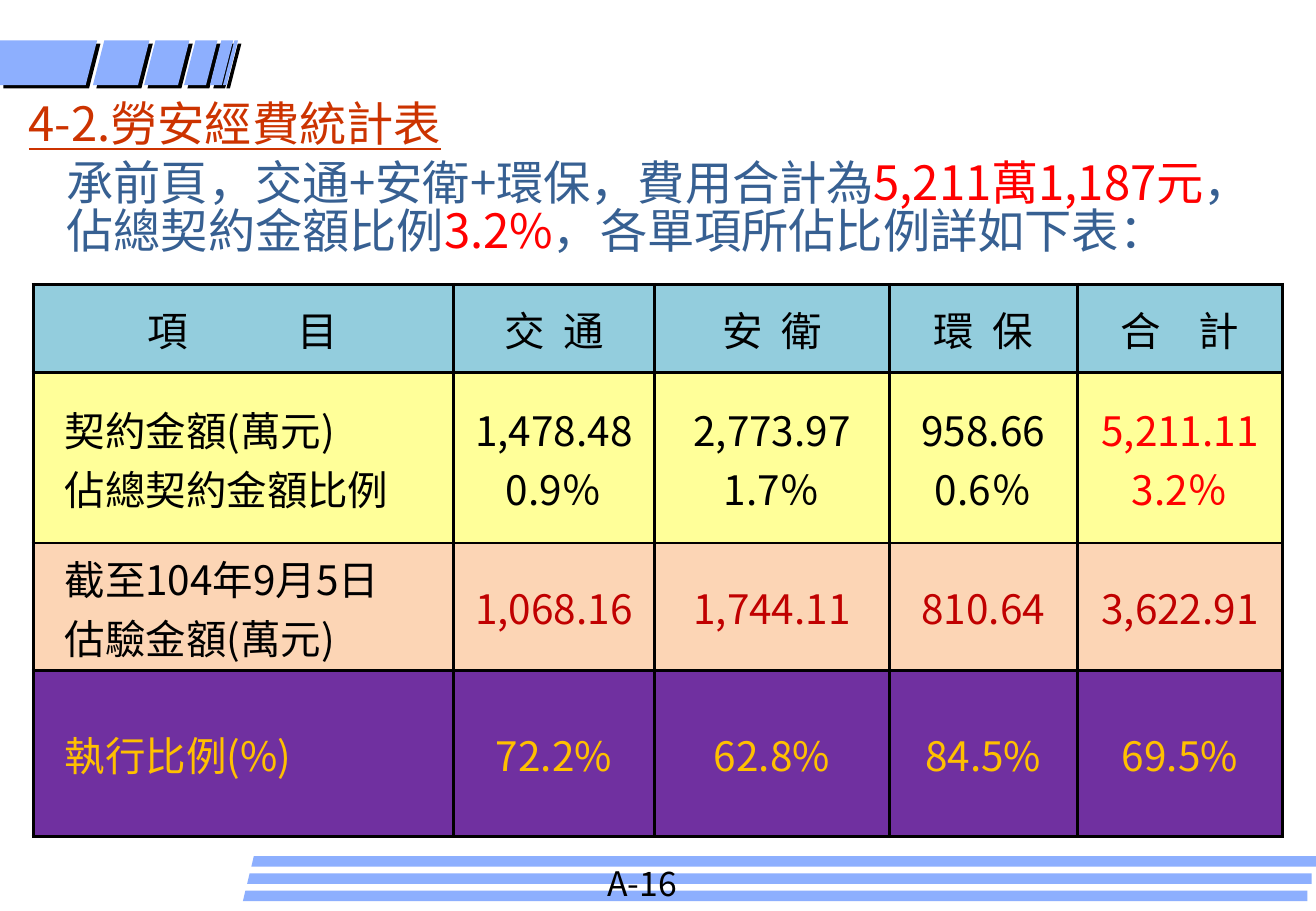
from lxml.etree import SubElement
from pptx import Presentation
from pptx.dml.color import RGBColor
from pptx.enum.text import MSO_ANCHOR, PP_ALIGN
from pptx.oxml.ns import qn
from pptx.util import Pt

FONT = "Noto Sans CJK SC"
BLACK = RGBColor(0x00, 0x00, 0x00)
RED = RGBColor(0xFF, 0x00, 0x00)
DARK_RED = RGBColor(0xC0, 0x00, 0x00)
TITLE_ORANGE = RGBColor(0xCC, 0x33, 0x00)
TEXT_BLUE = RGBColor(0x37, 0x60, 0x92)
BAND_BLUE = RGBColor(0x8D, 0xAF, 0xFE)
HEADER_TEAL = RGBColor(0x93, 0xCD, 0xDD)
YELLOW = RGBColor(0xFF, 0xFF, 0x99)
PEACH = RGBColor(0xFC, 0xD5, 0xB5)
PURPLE = RGBColor(0x70, 0x30, 0xA0)
GOLD = RGBColor(0xFF, 0xC0, 0x00)

# Top left and top right of each slanted block
BLOCKS = [(0, 57.6), (61.9, 88.6), (92.2, 112.3),
          (115.9, 128.9), (131.2, 138.2), (139, 141.1)]
BLOCK_TOP, BLOCK_BOTTOM, BLOCK_SLANT = 23.9, 50.5, 6.8

COLUMN_WIDTHS = [249, 119.5, 139, 111.5, 121.7]
ROW_HEIGHTS = [52.6, 100.8, 75.6, 98.6]
# Header characters with the gap between them
HEADERS = [("項", "目", 65), ("交", "通", 11), ("安", "衛", 11),
           ("環", "保", 11), ("合", "計", 22)]
# Row fill, label colour, value colour, total colour, cell lines
BODY_ROWS = [
    (YELLOW, BLACK, BLACK, RED, [
        ["契約金額(萬元)", "佔總契約金額比例"], ["1,478.48", "0.9％"],
        ["2,773.97", "1.7％"], ["958.66", "0.6％"], ["5,211.11", "3.2％"]]),
    (PEACH, BLACK, DARK_RED, DARK_RED, [
        ["截至104年9月5日", "估驗金額(萬元)"],
        ["1,068.16"], ["1,744.11"], ["810.64"], ["3,622.91"]]),
    (PURPLE, GOLD, GOLD, GOLD, [
        ["執行比例(%)"], ["72.2%"], ["62.8%"], ["84.5%"], ["69.5%"]]),
]


def add_run(paragraph, text, size, color, underline=None, gap=0):
    run = paragraph.add_run()
    run.text = text
    for name, value in {"name": FONT, "size": Pt(size), "underline": underline}.items():
        setattr(run.font, name, value)
    run.font.color.rgb = color
    properties = run.font._element
    SubElement(properties, qn("a:ea"), typeface=FONT)
    if gap:
        properties.set("spc", str(gap * 100))


def add_text(slide, left, top, width, height, runs, size, spacing=None, underline=None):
    frame = slide.shapes.add_textbox(Pt(left), Pt(top), Pt(width), Pt(height)).text_frame
    frame.word_wrap = True
    paragraph = frame.paragraphs[0]
    paragraph.line_spacing = spacing
    for text, color in runs:
        add_run(paragraph, text, size, color, underline)


def add_band(slide, points, shadow=False):
    start, *others = [(Pt(x), Pt(y)) for x, y in points]
    builder = slide.shapes.build_freeform(*start)
    builder.add_line_segments(others, close=True)
    shape = builder.convert_to_shape()
    shape.shadow.inherit = False
    shape.fill.solid()
    shape.fill.fore_color.rgb = BAND_BLUE
    shape.line.fill.background()
    if shadow:
        effects = shape._element.spPr.find(qn("a:effectLst"))
        outer = SubElement(effects, qn("a:outerShdw"), dist=str(Pt(2.8)),
                           dir="2700000", algn="ctr", rotWithShape="0")
        SubElement(outer, qn("a:srgbClr"), val=str(BLACK))


def add_bands(slide):
    # Bottom stripes
    for index in range(3):
        left, top = 149 - 2.5 * index, 507.5 + 10.2 * index
        right, bottom = left + 631, top + 6.3
        add_band(slide, [(left, bottom), (right, bottom), (right, top), (left + 1.5, top)])
    # Top slanted blocks
    for left, right in BLOCKS:
        add_band(slide, [(left, BLOCK_TOP), (right, BLOCK_TOP),
                         (right - BLOCK_SLANT, BLOCK_BOTTOM),
                         (max(left - BLOCK_SLANT, 0), BLOCK_BOTTOM)], shadow=True)


def format_cell(cell, fill, left_margin=0.7):
    margins = {"margin_left": left_margin, "margin_right": 0.7,
               "margin_top": 0.7, "margin_bottom": 0}
    for name, value in margins.items():
        setattr(cell, name, Pt(value))
    cell.vertical_anchor = MSO_ANCHOR.MIDDLE
    properties = cell._tc.get_or_add_tcPr()
    for side in ("a:lnL", "a:lnR", "a:lnT", "a:lnB"):
        line = SubElement(properties, qn(side), w=str(Pt(2)))
        SubElement(SubElement(line, qn("a:solidFill")), qn("a:srgbClr"), val=str(BLACK))
    cell.fill.solid()
    cell.fill.fore_color.rgb = fill


def add_cost_table(slide):
    table = slide.shapes.add_table(
        len(ROW_HEIGHTS), len(COLUMN_WIDTHS), Pt(19.6), Pt(168.5),
        Pt(sum(COLUMN_WIDTHS)), Pt(sum(ROW_HEIGHTS))).table
    table.first_row = table.horz_banding = False
    for column, width in zip(table.columns, COLUMN_WIDTHS):
        column.width = Pt(width)
    for row, height in zip(table.rows, ROW_HEIGHTS):
        row.height = Pt(height)

    # Header row
    for index, (first, second, gap) in enumerate(HEADERS):
        cell = table.cell(0, index)
        format_cell(cell, HEADER_TEAL)
        paragraph = cell.text_frame.paragraphs[0]
        paragraph.alignment = PP_ALIGN.CENTER
        add_run(paragraph, first, 24, BLACK, gap=gap)
        add_run(paragraph, second, 24, BLACK)

    # Body rows
    for row, (fill, label, value, total, cells) in enumerate(BODY_ROWS, 1):
        colors = [label, value, value, value, total]
        for column, (lines, color) in enumerate(zip(cells, colors)):
            cell = table.cell(row, column)
            format_cell(cell, fill, 0.7 if column else 18.7)
            frame = cell.text_frame
            for index, text in enumerate(lines):
                paragraph = frame.add_paragraph() if index else frame.paragraphs[0]
                paragraph.alignment = PP_ALIGN.CENTER if column else PP_ALIGN.LEFT
                add_run(paragraph, text, 24, color)


def main():
    presentation = Presentation()
    presentation.slide_width, presentation.slide_height = Pt(780), Pt(540)
    slide = presentation.slides.add_slide(presentation.slide_layouts[6])

    add_bands(slide)
    # Page number
    add_text(slide, 352.8, 507.6, 87, 31.7, [("A-16", BLACK)], 20)
    add_cost_table(slide)
    # Title and summary
    add_text(slide, 10, 57.6, 534, 34.6, [("4-2.勞安經費統計表", TITLE_ORANGE)],
             28, spacing=0.85, underline=True)
    add_text(slide, 32.4, 92.2, 738, 73.4, [
        ("承前頁，交通+安衛+環保，費用合計為", TEXT_BLUE),
        ("5,211萬1,187元", RED),
        ("，佔總契約金額比例", TEXT_BLUE),
        ("3.2%", RED),
        ("，各單項所佔比例詳如下表：", TEXT_BLUE)], 28, spacing=0.85)

    presentation.save("out.pptx")


if __name__ == "__main__":
    main()
